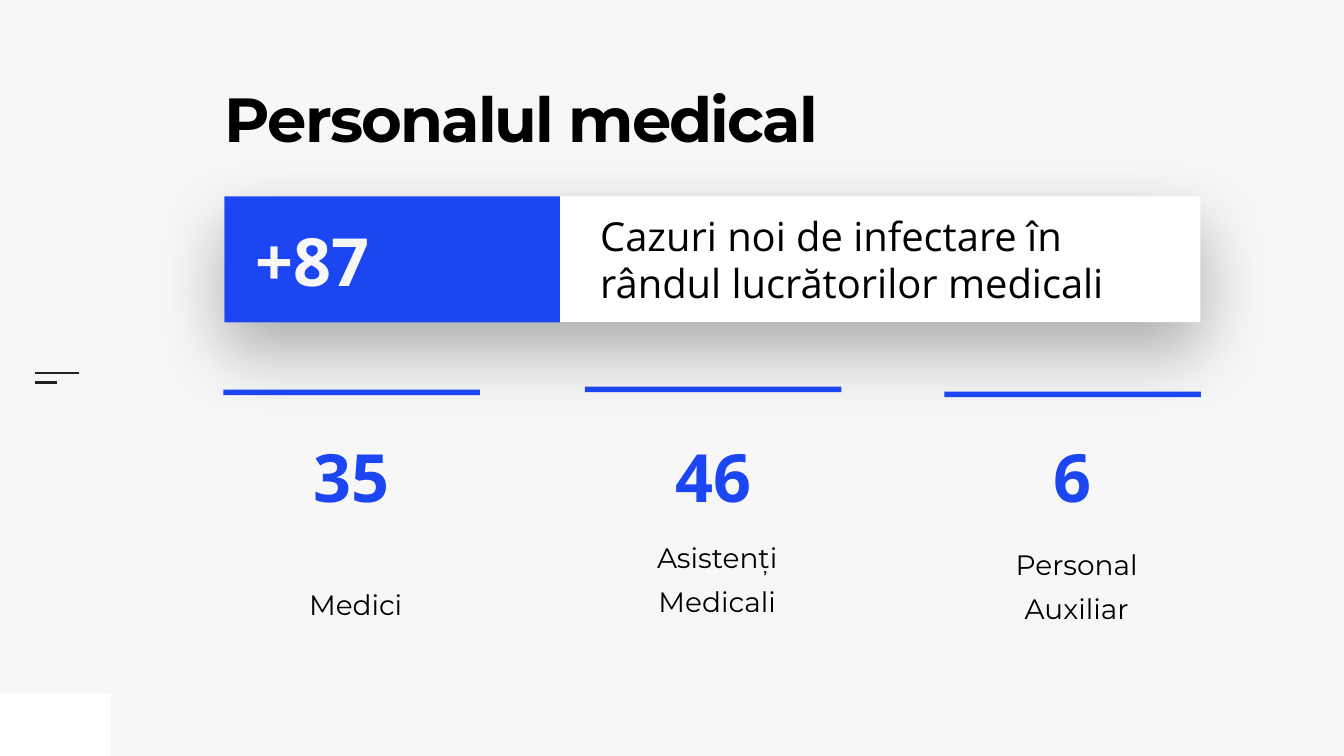
from lxml import etree
from pptx import Presentation
from pptx.dml.color import RGBColor
from pptx.enum.shapes import MSO_CONNECTOR, MSO_SHAPE
from pptx.enum.text import MSO_ANCHOR, PP_ALIGN
from pptx.oxml.ns import qn
from pptx.util import Pt

RECT = MSO_SHAPE.RECTANGLE
STRAIGHT = MSO_CONNECTOR.STRAIGHT
TOP, MIDDLE, BOTTOM = MSO_ANCHOR.TOP, MSO_ANCHOR.MIDDLE, MSO_ANCHOR.BOTTOM
LEFT, CENTER = PP_ALIGN.LEFT, PP_ALIGN.CENTER

BLUE = RGBColor(0x1D, 0x46, 0xF3)
WHITE = RGBColor(0xFE, 0xFF, 0xFF)
PAPER = RGBColor(0xF7, 0xF7, 0xF7)
BLACK = RGBColor(0, 0, 0)
DARK = RGBColor(0x22, 0x22, 0x22)

HEADING, BODY = "Montserrat", "Open Sans"
COLUMN_W, BAR_H = 366.5, 7.9
COLUMNS = [
    (319, 556.5, 556.5, "35", "Medici"),
    (835.5, 552.2, 552.2, "46", "Asistenți Medicali"),
    (1349, 562.3, 559.5, "6", "Personal Auxiliar"),
]


def add_rect(slide, x, y, w, h, color):
    s = slide.shapes.add_shape(RECT, Pt(x), Pt(y), Pt(w), Pt(h))
    s.shadow.inherit = False
    s.fill.solid()
    s.fill.fore_color.rgb = color
    s.line.fill.background()
    return s


def add_rule(slide, x1, x2, y):
    c = slide.shapes.add_connector(STRAIGHT, Pt(x1), Pt(y), Pt(x2), Pt(y))
    c.line.color.rgb = DARK
    c.line.width = Pt(3)
    etree.SubElement(c._element.spPr, qn("a:effectLst"))


def add_shadow(s):
    effects = s._element.spPr.find(qn("a:effectLst"))
    shadow = etree.SubElement(
        effects, qn("a:outerShdw"), blurRad=str(Pt(100)), dist=str(Pt(40)),
        dir="5400000", algn="ctr", rotWithShape="0")
    color = etree.SubElement(shadow, qn("a:srgbClr"), val=str(BLACK))
    etree.SubElement(color, qn("a:alpha"), val="30000")


def write(s, text, size, font, color, bold=False, align=LEFT, anchor=MIDDLE,
          insets=(7.2, 7.2, 7.2, 7.2)):
    tf = s.text_frame
    tf.word_wrap = True
    tf.vertical_anchor = anchor
    tf.margin_left, tf.margin_top, tf.margin_right, tf.margin_bottom = map(Pt, insets)
    p = tf.paragraphs[0]
    p.alignment = align
    r = p.add_run()
    r.text = text
    r.font.name = font
    r.font.size = Pt(size)
    r.font.bold = bold
    r.font.color.rgb = color
    return p, r


def add_text(slide, x, y, w, h, *args, **kwargs):
    s = slide.shapes.add_textbox(Pt(x), Pt(y), Pt(w), Pt(h))
    return write(s, *args, **kwargs)


def add_column_card(slide, x, y, bar_y, label):
    card = add_rect(slide, x, y, COLUMN_W, 393, PAPER)
    p, r = write(card, label, 40, HEADING, BLACK, align=CENTER, anchor=BOTTOM,
                 insets=(39.6, 51.1, 28.1, 62.6))
    p.line_spacing = 1.3
    p.space_before = Pt(20)


def add_title(slide, text):
    p, r = add_text(slide, 321, 134.6, 937, 196.6, text, 89, HEADING, BLACK,
                    bold=True, anchor=TOP, insets=(0, 0, 0, 0))
    p.line_spacing = 0.8
    r._r.get_or_add_rPr().set("spc", "-270")


def add_banner(slide, number, text):
    panel = add_rect(slide, 320.4, 280.4, 1394.6, 180, WHITE)
    add_shadow(panel)
    add_text(slide, 850.3, 293.8, 846.7, 152.6, text, 57, BODY, BLACK)
    add_rect(slide, 320.4, 280.6, 479.5, 180, BLUE)
    add_text(slide, 358.6, 306, 434, 129.6, number, 95, BODY, PAPER, bold=True)


def main():
    prs = Presentation()
    prs.slide_width, prs.slide_height = Pt(1920), Pt(1080)
    slide = prs.slides.add_slide(prs.slide_layouts[6])
    slide.background.fill.solid()
    slide.background.fill.fore_color.rgb = PAPER

    add_rect(slide, 0, 991, 158.4, 89, WHITE)
    add_rule(slide, 49.7, 113, 533.5)
    add_rule(slide, 49.7, 81.4, 546.5)

    for x, y, bar_y, number, label in COLUMNS:
        add_column_card(slide, x, y, bar_y, label)
    add_title(slide, "Personalul medical")
    add_banner(slide, "+87", "Cazuri noi de infectare în rândul lucrătorilor medicali")
    for x, y, bar_y, number, label in COLUMNS:
        add_rect(slide, x, bar_y, COLUMN_W, BAR_H, BLUE)
        add_text(slide, x, 615, COLUMN_W, 129.6, number, 95, BODY, BLUE,
                 bold=True, align=CENTER)

    prs.save("out.pptx")


if __name__ == "__main__":
    main()
